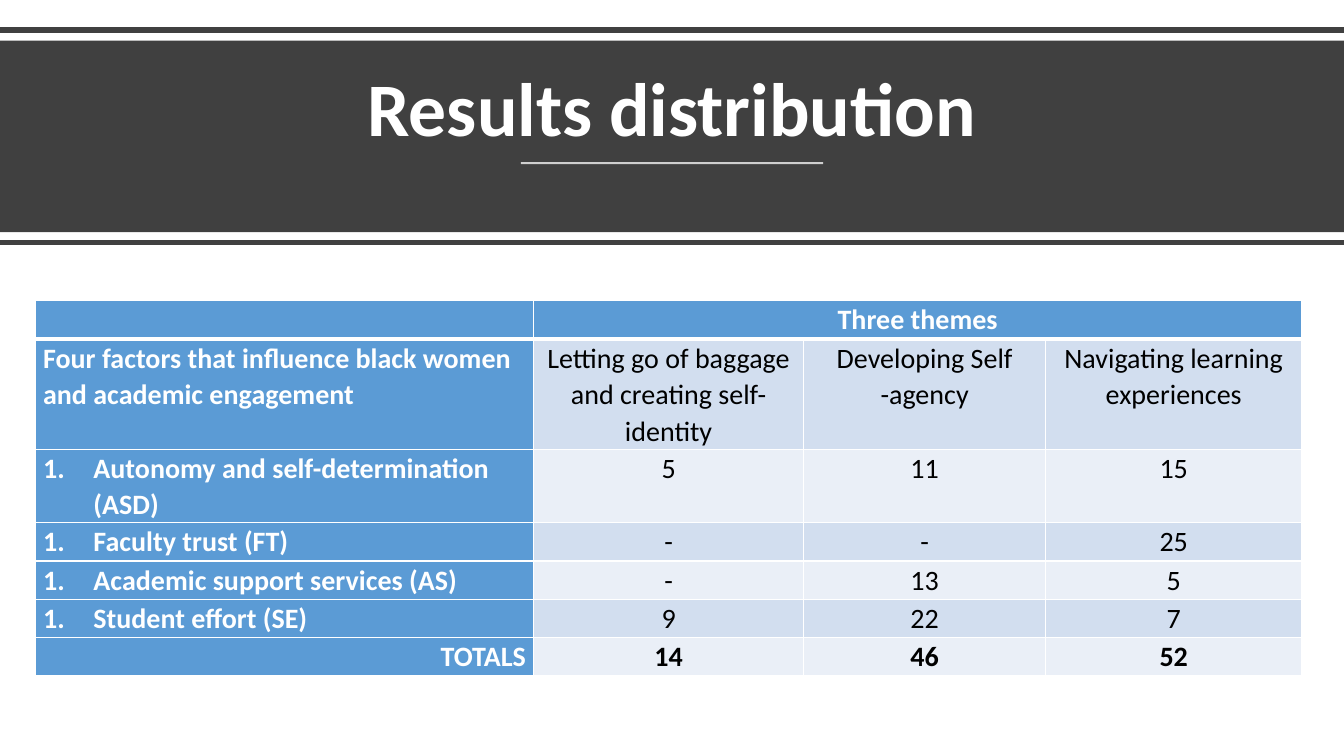
from lxml.etree import SubElement
from pptx import Presentation
from pptx.dml.color import RGBColor
from pptx.enum.shapes import MSO_CONNECTOR, MSO_SHAPE
from pptx.enum.text import MSO_ANCHOR, MSO_AUTO_SIZE, PP_ALIGN
from pptx.oxml.ns import qn
from pptx.util import Pt

HUES = {"dark": "404040", "white": "FFFFFF", "black": "000000",
        "blue": "5B9BD5", "pale": "EAEFF7", "mid": "D2DEEF"}
WIDE, HIGH = 960, 540
COLS = [355.7, 193, 172.8, 183.1]
ROWS = [27.4, 78.5, 52.6, 27.4, 27.4, 27.4, 27.4]
CELLS = [
    ["", "Three themes"],
    ["Four factors that influence black women and academic engagement",
     "Letting go of baggage and creating self-identity",
     "Developing Self -agency", "Navigating learning experiences"],
    ["Autonomy and self-determination (ASD)", "5", "11", "15"],
    ["Faculty trust (FT)", "-", "-", "25"],
    ["Academic support services (AS)", "-", "13", "5"],
    ["Student effort (SE)", "9", "22", "7"],
    ["TOTALS", "14", "46", "52"],
]


class Deck:
    """Holds the style and the current slide, and draws each kind of element."""

    def __init__(self, font="Calibri"):
        self.font = font
        self.show = Presentation()
        self.show.slide_width, self.show.slide_height = Pt(WIDE), Pt(HIGH)
        self.slide = self.show.slides.add_slide(self.show.slide_layouts[5])

    def tint(self, name):
        return RGBColor.from_string(HUES[name])

    def text(self, para, words, size, hue, bold, align, space):
        para.alignment, para.line_spacing = align, space
        run = para.add_run()
        run.text = words
        run.font.name, run.font.size, run.font.bold = self.font, Pt(size), bold
        run.font.color.rgb = self.tint(hue)

    def band(self, top, high, hue):
        box = self.slide.shapes.add_shape(
            MSO_SHAPE.RECTANGLE, 0, Pt(top), Pt(WIDE), Pt(high))
        box.shadow.inherit = False
        box.fill.solid()
        box.fill.fore_color.rgb = self.tint(hue)
        box.line.fill.background()

    def rule(self, left, right, y, hue, width, alpha=None):
        line = self.slide.shapes.add_connector(
            MSO_CONNECTOR.STRAIGHT, Pt(left), Pt(y), Pt(right), Pt(y))
        line.line.width = Pt(width)
        line.line.color.rgb = self.tint(hue)
        props = line._element.spPr
        SubElement(props, qn("a:effectLst"))
        if alpha:
            color = props.find(".//" + qn("a:srgbClr"))
            SubElement(color, qn("a:alpha"), val=str(alpha * 1000))

    def title(self, words, left, top, wide, high):
        box = self.slide.shapes.title
        box.left, box.top, box.width, box.height = map(Pt, (left, top, wide, high))
        frame = box.text_frame
        frame.word_wrap, frame.auto_size = True, MSO_AUTO_SIZE.NONE
        frame.vertical_anchor = MSO_ANCHOR.BOTTOM
        self.text(frame.paragraphs[0], words, 54, "white", True, PP_ALIGN.CENTER, 0.9)
        self.slide.shapes._spTree.append(box._element)

    def edge(self, cell, row):
        props = cell._tc.get_or_add_tcPr()
        for side in "LRTB":
            thick = (row, side) in ((0, "B"), (1, "T"))
            line = SubElement(props, qn("a:ln" + side), w=str(Pt(3 if thick else 1)))
            fill = SubElement(line, qn("a:solidFill"))
            SubElement(fill, qn("a:srgbClr"), val=HUES["white"])

    def number(self, para):
        props = para._p.get_or_add_pPr()
        props.set("marL", str(Pt(36)))
        props.set("indent", str(Pt(-36)))
        SubElement(props, qn("a:buFont"), typeface="+mj-lt")
        SubElement(props, qn("a:buAutoNum"), type="arabicPeriod")

    def table(self, left, top):
        grid = self.slide.shapes.add_table(
            len(ROWS), len(COLS), Pt(left), Pt(top), Pt(sum(COLS)), Pt(sum(ROWS))).table
        for col, wide in zip(grid.columns, COLS):
            col.width = Pt(wide)
        for row, high in zip(grid.rows, ROWS):
            row.height = Pt(high)
        grid.cell(0, 1).merge(grid.cell(0, len(COLS) - 1))
        last = len(ROWS) - 1
        for r in range(len(ROWS)):
            for c in range(len(COLS)):
                cell = grid.cell(r, c)
                head = r == 0 or c == 0
                cell.margin_left = cell.margin_right = Pt(5.4)
                cell.margin_top = cell.margin_bottom = 0
                self.edge(cell, r)
                cell.fill.solid()
                cell.fill.fore_color.rgb = self.tint(
                    "blue" if head else "mid" if r % 2 else "pale")
                if c >= len(CELLS[r]) or not CELLS[r][c]:
                    continue
                align = PP_ALIGN.CENTER
                if c == 0:
                    align = PP_ALIGN.RIGHT if r == last else PP_ALIGN.LEFT
                para = cell.text_frame.paragraphs[0]
                self.text(para, CELLS[r][c], 20, "white" if head else "black",
                          head or r == last, align, 1.07)
                if c == 0 and 1 < r < last:
                    self.number(para)


def main():
    deck = Deck()
    deck.rule(0, WIDE, 21.5, "dark", 4)
    deck.band(29, 136.8, "dark")
    deck.title("Results distribution", 41.5, 39, 877, 73.5)
    deck.rule(372, 588, 116.5, "white", 1.5, 75)
    deck.rule(0, WIDE, 173.3, "dark", 4)
    deck.table(25.4, 214.8)
    deck.show.save("out.pptx")


if __name__ == "__main__":
    main()
